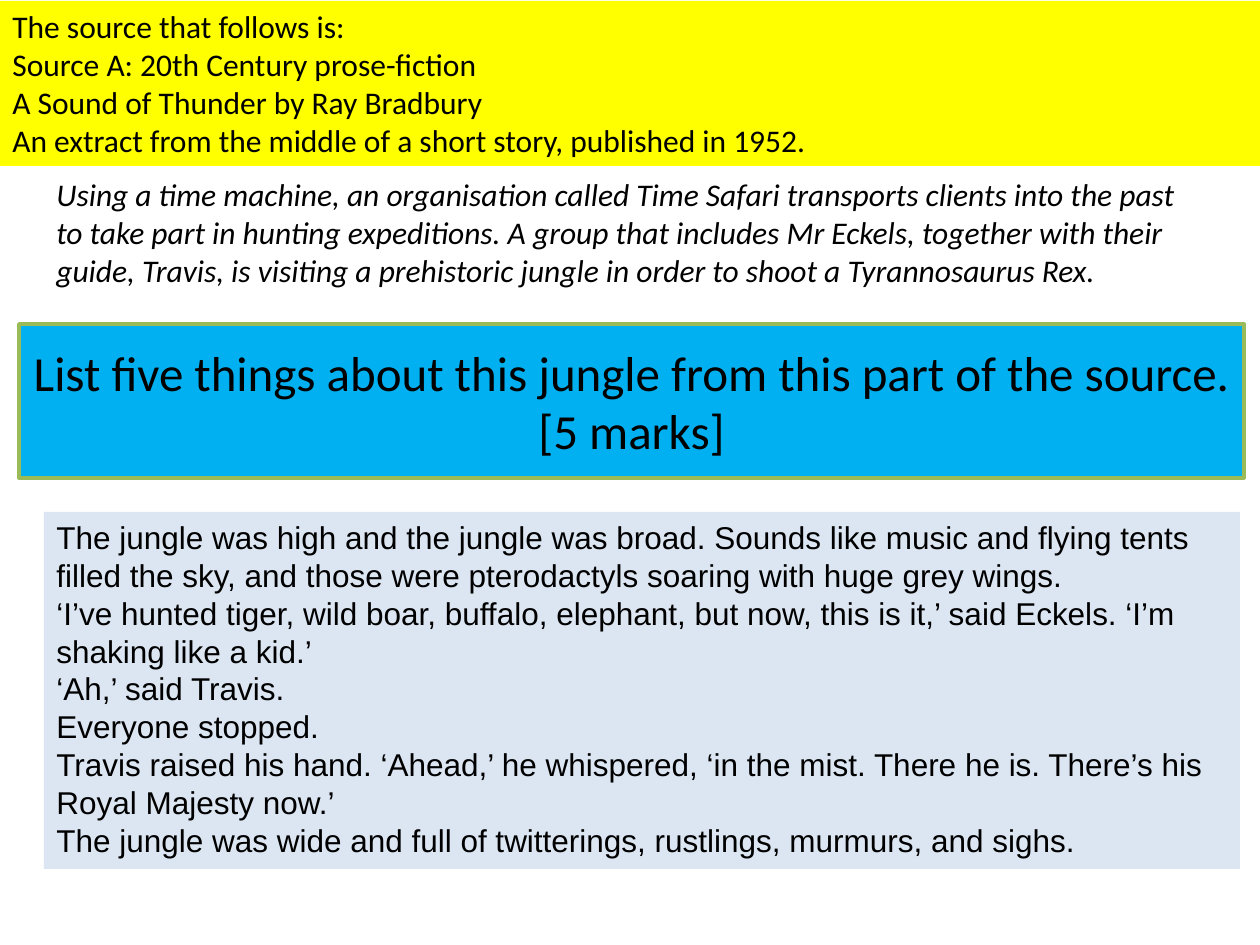
from dataclasses import dataclass

from pptx import Presentation
from pptx.dml.color import RGBColor as RGB
from pptx.enum.text import MSO_ANCHOR as ANCHOR, MSO_AUTO_SIZE as FIT, PP_ALIGN as ALIGN
from pptx.util import Emu, Pt

SCALE = 914400 / 126


@dataclass(frozen=True)
class Theme:
    """Colours, fonts and type sizes of the slide."""
    ink: RGB = RGB(0, 0, 0)
    header: RGB = RGB(0xFF, 0xFF, 0x00)
    question: RGB = RGB(0x00, 0xB0, 0xF0)
    border: RGB = RGB(0x9B, 0xBB, 0x59)
    extract: RGB = RGB(0xDC, 0xE6, 0xF2)
    sans: str = "Calibri"
    prose: str = "Arial"
    title_size: int = 28
    body_size: int = 18


THEME = Theme()

QUESTION = "List five things about this jungle from this part of the source.\n[5 marks]"
EXTRACT = [
    "The jungle was high and the jungle was broad. Sounds like music and flying tents "
    "filled the sky, and those were pterodactyls soaring with huge grey wings.",
    "‘I’ve hunted tiger, wild boar, buffalo, elephant, but now, this is it,’ said Eckels. "
    "‘I’m shaking like a kid.’",
    "‘Ah,’ said Travis.",
    "Everyone stopped.",
    "Travis raised his hand. ‘Ahead,’ he whispered, ‘in the mist. There he is. "
    "There’s his Royal Majesty now.’",
    "The jungle was wide and full of twitterings, rustlings, murmurs, and sighs.",
]
INTRO = [
    "Using a time machine, an organisation called Time Safari transports clients into the past "
    "to take part in hunting expeditions. A group that includes Mr Eckels, together with their "
    "guide, Travis, is visiting a prehistoric jungle in order to shoot a Tyrannosaurus Rex.",
]
HEADER = [
    "The source that follows is:",
    "Source A: 20th Century prose-fiction",
    "A Sound of Thunder by Ray Bradbury",
    "An extract from the middle of a short story, published in 1952.",
]


def px(n):
    """Turn pixels into EMU."""
    return Emu(round(n * SCALE))


def style(p, font, size, italic=None):
    """Set the font of a paragraph."""
    p.font.name = font
    p.font.size = Pt(size)
    p.font.italic = italic
    p.font.color.rgb = THEME.ink


def fill(sp, color):
    """Give a shape a solid fill."""
    sp.fill.solid()
    sp.fill.fore_color.rgb = color


def set_title(slide, text, x, y, w, h):
    """Place the question in the title placeholder."""
    sp = slide.shapes.title
    sp.left, sp.top, sp.width, sp.height = map(px, (x, y, w, h))
    fill(sp, THEME.question)
    sp.line.color.rgb = THEME.border
    sp.line.width = Pt(2)
    tf = sp.text_frame
    tf.auto_size = FIT.NONE
    tf.vertical_anchor = ANCHOR.MIDDLE
    p = tf.paragraphs[0]
    p.text = text
    p.alignment = ALIGN.CENTER
    style(p, THEME.sans, THEME.title_size)


def add_text(slide, lines, x, y, w, h, font=THEME.sans, color=None, italic=None):
    """Add a wrapped text box with one paragraph per line."""
    sp = slide.shapes.add_textbox(*map(px, (x, y, w, h)))
    if color is not None:
        fill(sp, color)
    tf = sp.text_frame
    tf.word_wrap = True
    tf.auto_size = FIT.SHAPE_TO_FIT_TEXT
    tf.text = "\n".join(lines)
    for p in tf.paragraphs:
        style(p, font, THEME.body_size, italic)


def main():
    """Build the slide and save it."""
    prs = Presentation()
    prs.slide_width, prs.slide_height = px(1260), px(945)
    slide = prs.slides.add_slide(prs.slide_layouts[5])
    set_title(slide, QUESTION, 19, 324, 1225, 154)
    add_text(slide, EXTRACT, 44, 512, 1196, 357, font=THEME.prose, color=THEME.extract)
    add_text(slide, INTRO, 44, 169, 1160, 127, italic=True)
    add_text(slide, HEADER, 0, 1, 1260, 165, color=THEME.header)
    prs.save("out.pptx")


if __name__ == "__main__":
    main()
